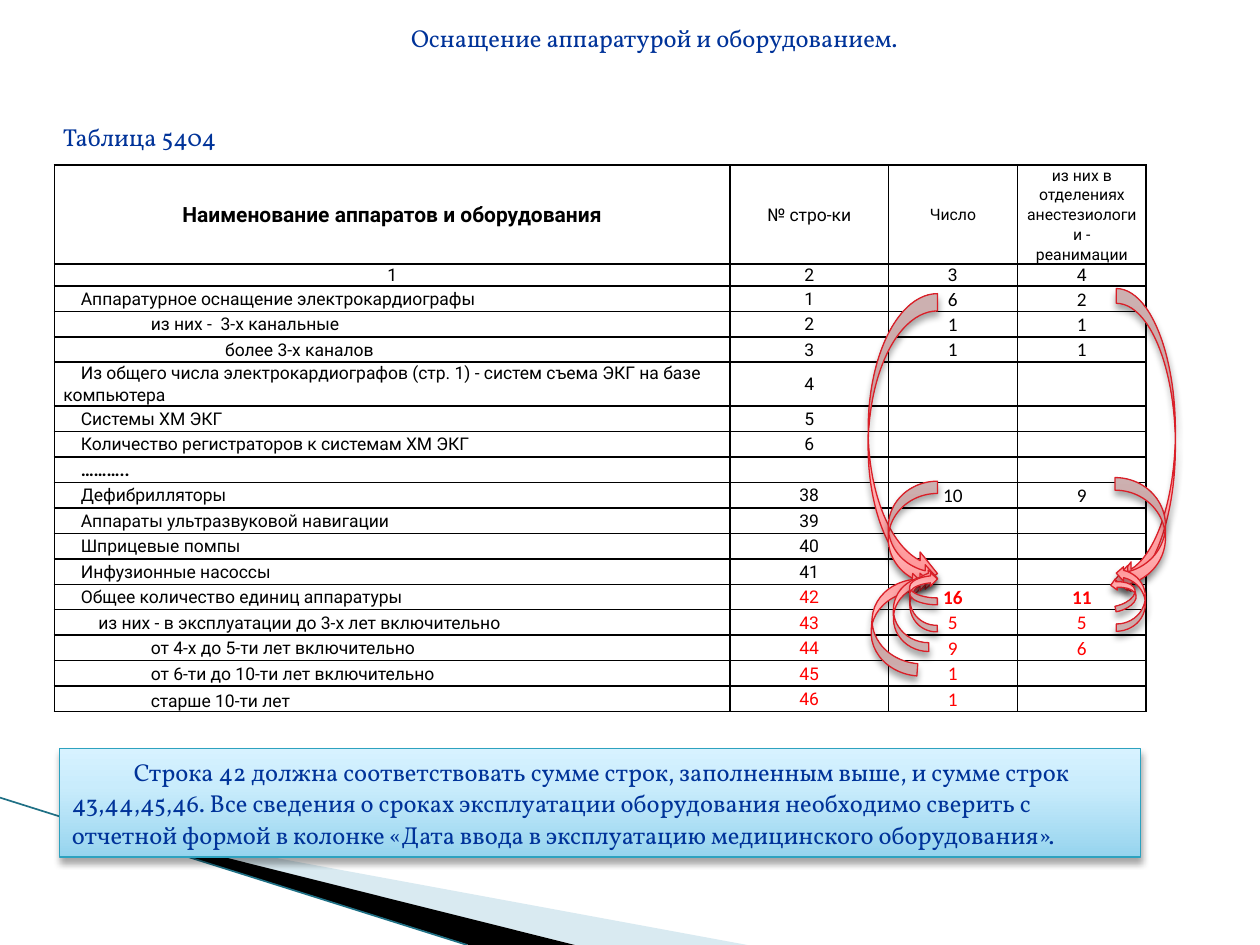
from lxml import etree
from pptx import Presentation
from pptx.dml.color import RGBColor
from pptx.enum.shapes import MSO_CONNECTOR, MSO_SHAPE
from pptx.enum.text import MSO_ANCHOR, PP_ALIGN
from pptx.oxml.ns import qn
from pptx.util import Pt

BLACK = RGBColor(0x00, 0x00, 0x00)
RED = RGBColor(0xFF, 0x00, 0x00)
NAVY = RGBColor(0x00, 0x33, 0x99)
PALE = RGBColor(0xD9, 0xEA, 0xF1)
TEAL = RGBColor(0x1F, 0x70, 0x85)
BOX_LINE = RGBColor(0x2D, 0xA2, 0xBF)
ARROW_LINE = RGBColor(0xDA, 0x1F, 0x28)
BOX_STOPS = [(0, "96D4EE"), (65, "C9ECFC"), (100, "D7F2FF")]
ARROW_STOPS = [(0, "FF9294"), (65, "FFCDCD"), (100, "FFDCDC")]


def write(tf, text, font="Vollkorn", size=14, color=NAVY, bold=False,
          align=PP_ALIGN.LEFT, indent=0, margin=0, spacing=None):
    """Fill the first paragraph of a text frame."""
    tf.word_wrap = True
    p = tf.paragraphs[0]
    p.alignment = align
    p.line_spacing = spacing
    pPr = p._p.get_or_add_pPr()
    pPr.set("marL", str(Pt(margin)))
    pPr.set("indent", str(Pt(indent)))
    if not text:
        etree.SubElement(p._p, qn("a:endParaRPr"), sz=str(size * 100))
        return
    r = p.add_run()
    r.text = text
    r.font.name, r.font.size, r.font.bold = font, Pt(size), bold
    r.font.color.rgb = color


def gloss(sp, stops, line):
    """Vertical gradient, thin outline and soft shadow below."""
    sp.fill.gradient()
    sp.fill.gradient_angle = 90
    sp.line.color.rgb = line
    sp.line.width = Pt(0.75)
    spPr = sp._element.spPr
    gs_list = spPr.find(qn("a:gradFill")).find(qn("a:gsLst"))
    for gs in list(gs_list):
        gs_list.remove(gs)
    for pos, rgb in stops:
        gs = etree.SubElement(gs_list, qn("a:gs"), pos=str(pos * 1000))
        etree.SubElement(gs, qn("a:srgbClr"), val=rgb)
    effects = etree.SubElement(spPr, qn("a:effectLst"))
    shadow = etree.SubElement(effects, qn("a:outerShdw"), blurRad=str(Pt(4)),
                              dist=str(Pt(3)), dir="5400000", rotWithShape="0")
    clr = etree.SubElement(shadow, qn("a:srgbClr"), val="000000")
    etree.SubElement(clr, qn("a:alpha"), val="35000")


prs = Presentation()
prs.slide_width, prs.slide_height = Pt(720), Pt(540)
s = prs.slides.add_slide(prs.slide_layouts[6])

# Background wedges and line
wedges = [
    (PALE, [(39.6, 468.5), (427, 540), (328.5, 540), (39.6, 468)]),
    (BLACK, [(38.2, 467.3), (328.5, 540), (268, 540), (38.9, 468)]),
]
for color, points in wedges:
    fb = s.shapes.build_freeform(Pt(points[0][0]), Pt(points[0][1]), scale=1.0)
    fb.add_line_segments([(Pt(x), Pt(y)) for x, y in points[1:]])
    sp = fb.convert_to_shape()
    sp.shadow.inherit = False
    sp.fill.solid()
    sp.fill.fore_color.rgb = color
    sp.line.fill.background()
edge = s.shapes.add_connector(MSO_CONNECTOR.STRAIGHT,
                              Pt(0), Pt(455.8), Pt(267), Pt(540))
edge.line.color.rgb = TEAL
edge.line.width = Pt(0.95)
etree.SubElement(edge._element.spPr, qn("a:effectLst"))

# Equipment table: indent of the name, then the four cells
header = ["Наименование аппаратов и оборудования", "№ стро-ки", "Число",
          "из них в отделениях анестезиологии - реанимации"]
rows = [
    (0, header),
    (0, ["1", "2", "3", "4"]),
    (10, ["Аппаратурное оснащение электрокардиографы", "1", "6", "2"]),
    (50, ["из них - \u00a03-х канальные".replace("\u00a0", " "), "2", "1", "1"]),
    (92.5, ["более 3-х каналов", "3", "1", "1"]),
    (10, ["Из общего числа электрокардиографов (стр. 1) - систем съема ЭКГ "
          "на базе компьютера", "4", "", ""]),
    (10, ["Системы ХМ ЭКГ", "5", "", ""]),
    (10, ["Количество регистраторов к системам ХМ ЭКГ", "6", "", ""]),
    (10, ["………..", "", "", ""]),
    (10, ["Дефибрилляторы", "38", "10", "9"]),
    (10, ["Аппараты ультразвуковой навигации", "39", "", ""]),
    (10, ["Шприцевые помпы", "40", "", ""]),
    (10, ["Инфузионные насоссы", "41", "", ""]),
    (10, ["Общее количество единиц аппаратуры", "42", "16", "11"]),
    (20, ["из них - в эксплуатации до 3-х лет включительно", "43", "5", "5"]),
    (50, ["от 4-х до 5-ти лет включительно", "44", "9", "6"]),
    (50, ["от 6-ти до 10-ти лет включительно", "45", "1", ""]),
    (50, ["старше 10-ти лет", "46", "1", ""]),
]
HEADER_ROW, NUMBER_ROW, LONG_ROW, DOTS_ROW, TOTAL_ROW = 0, 1, 5, 8, 13
heights = {HEADER_ROW: 56.6, NUMBER_ROW: 12.5, LONG_ROW: 25.1}
tbl = s.shapes.add_table(len(rows), 4, Pt(31), Pt(94.3),
                         Pt(624), Pt(312)).table
tbl.first_row = tbl.horz_banding = False
for col, width in zip(tbl.columns, [386.2, 90.4, 73.8, 73.6]):
    col.width = Pt(width)
for i, (indent, texts) in enumerate(rows):
    tbl.rows[i].height = Pt(heights.get(i, 14.55))
    for j, text in enumerate(texts):
        cell = tbl.cell(i, j)
        cell.margin_left = cell.margin_right = Pt(5.2)
        cell.margin_top = cell.margin_bottom = 0
        is_value = i > NUMBER_ROW and j > 1
        at_bottom = is_value or (i == len(rows) - 1 and j == 0)
        cell.vertical_anchor = MSO_ANCHOR.BOTTOM if at_bottom else MSO_ANCHOR.MIDDLE
        size = [12, 10, 9, 9][j] if i == HEADER_ROW else 11 if is_value and text else 10
        write(cell.text_frame, text, size=size,
              font="Calibri" if is_value else "Roboto",
              color=RED if i >= TOTAL_ROW and j else BLACK,
              bold=(i, j) in [(HEADER_ROW, 0), (DOTS_ROW, 0)]
              or (i == TOTAL_ROW and is_value),
              align=PP_ALIGN.LEFT if i > NUMBER_ROW and j == 0 else PP_ALIGN.CENTER,
              indent=indent if j == 0 else 0, spacing=1.07)
        cell.fill.background()
        tcPr = cell._tc.get_or_add_tcPr()
        for k, side in enumerate(["a:lnL", "a:lnR", "a:lnT", "a:lnB"]):
            ln = etree.Element(qn(side), w=str(Pt(1)))
            fill = etree.SubElement(ln, qn("a:solidFill"))
            etree.SubElement(fill, qn("a:srgbClr"), val="000000")
            tcPr.insert(k, ln)

# Explanation box
sp = s.shapes.add_shape(MSO_SHAPE.RECTANGLE, Pt(34), Pt(427.8), Pt(617.8), Pt(61.9))
gloss(sp, BOX_STOPS, BOX_LINE)
sp.text_frame.vertical_anchor = MSO_ANCHOR.TOP
write(sp.text_frame,
      "Строка 42 должна соответствовать сумме строк, заполненным выше, и сумме "
      "строк 43,44,45,46. Все сведения о сроках эксплуатации оборудования "
      "необходимо сверить с отчетной формой в колонке «Дата ввода в "
      "эксплуатацию медицинского оборудования».", indent=35.4, spacing=1.07)

# Curved arrows into the total row: shape, box, rotation, mirrored
RIGHT, LEFT = MSO_SHAPE.CURVED_RIGHT_ARROW, MSO_SHAPE.CURVED_LEFT_ARROW
arrows = [
    (RIGHT, (496.1, 167.8, 39.6, 169.9), 0, False),
    (RIGHT, (507.6, 275, 28.1, 62.6), 0, False),
    (LEFT, (637.9, 164.9, 33.8, 175.7), 0, False),
    (LEFT, (637.2, 272.9, 28.8, 65.5), 0, False),
    (RIGHT, (637.9, 323.3, 16.6, 37.4), 180, False),
    (RIGHT, (635.8, 329.8, 13, 18.7), 168.5, False),
    (RIGHT, (498.2, 326.2, 28.1, 59), 184.6, True),
    (RIGHT, (510.5, 326.9, 20.2, 45.4), 180, True),
    (RIGHT, (519.8, 325.4, 15.1, 36), 177.5, True),
    (RIGHT, (519.8, 326.9, 15.8, 18.7), 180, True),
]
for kind, box, rotation, mirrored in arrows:
    sp = s.shapes.add_shape(kind, *[Pt(v) for v in box])
    sp.rotation = rotation
    if mirrored:
        sp._element.spPr.find(qn("a:xfrm")).set("flipH", "1")
    gloss(sp, ARROW_STOPS, ARROW_LINE)

# Title and table caption
tb = s.shapes.add_textbox(Pt(121.7), Pt(9.4), Pt(504.7), Pt(24.5))
write(tb.text_frame, "Оснащение аппаратурой и оборудованием.", align=PP_ALIGN.CENTER)
tb = s.shapes.add_textbox(Pt(20.2), Pt(66.2), Pt(175.7), Pt(24.5))
write(tb.text_frame, "Таблица 5404", margin=8.6)

prs.save("out.pptx")
